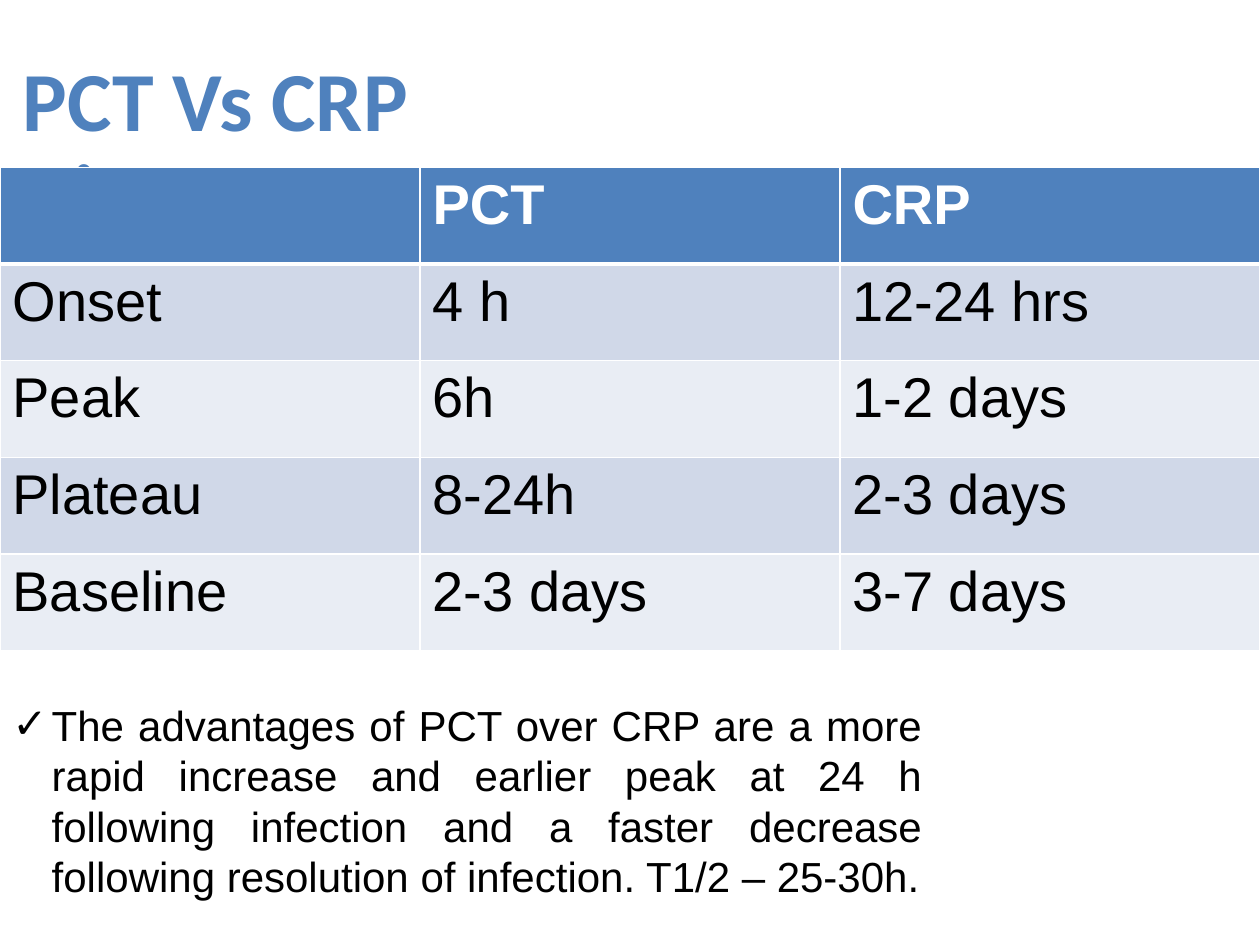
import pptx
import pptx.util
import pptx.dml.color
import pptx.enum.text
from lxml import etree
from pptx.oxml.ns import qn

Pt = pptx.util.Pt
RGB = pptx.dml.color.RGBColor
PP_ALIGN = pptx.enum.text.PP_ALIGN
ANCHOR = pptx.enum.text.MSO_ANCHOR

BLUE = RGB(0x4F, 0x81, 0xBD)
BAND_DARK = RGB(0xD0, 0xD8, 0xE8)
BAND_LIGHT = RGB(0xE9, 0xED, 0xF4)
WHITE = RGB(0xFF, 0xFF, 0xFF)
BLACK = RGB(0, 0, 0)

TITLE = "PCT Vs CRP"
BODY = "."
MARKERS = [
    ("", "PCT", "CRP"),
    ("Onset", "4 h", "12-24 hrs"),
    ("Peak", "6h", "1-2 days"),
    ("Plateau", "8-24h", "2-3 days"),
    ("Baseline", "2-3 days", "3-7 days"),
]
ADVANTAGES = (
    "The advantages of PCT over CRP are a more rapid increase and earlier peak "
    "at 24 h following infection and a faster decrease following resolution of "
    "infection. T1/2 – 25-30h."
)

SLIDE_W, SLIDE_H = 720, 540
TABLE_TOP, TABLE_H = 95.76, 276


def style_font(font, size, name, color, bold=False):
    for attribute, value in dict(size=Pt(size), name=name, bold=bold).items():
        setattr(font, attribute, value)
    font.color.rgb = color


def add_bullet(paragraph, char, indent, color):
    """Give the paragraph a hanging bullet."""
    props = paragraph._p.get_or_add_pPr()
    props.set("marL", str(Pt(indent)))
    props.set("indent", str(-Pt(indent)))
    bullet_color = etree.SubElement(props, qn("a:buClr"))
    etree.SubElement(bullet_color, qn("a:srgbClr"), val=str(color))
    etree.SubElement(props, qn("a:buFont"), typeface="Arial")
    etree.SubElement(props, qn("a:buChar"), char=char)


def add_text(slide, text, box, font, bullet=None, align=None, anchor=ANCHOR.TOP):
    frame = slide.shapes.add_textbox(*map(Pt, box)).text_frame
    frame.word_wrap = True
    frame.vertical_anchor = anchor
    paragraph = frame.paragraphs[0]
    paragraph.alignment = align
    if bullet:
        add_bullet(paragraph, *bullet)
    run = paragraph.add_run()
    run.text = text
    style_font(run.font, *font)


def set_borders(cell, widths):
    """Draw white borders; must run before the cell gets its fill."""
    props = cell._tc.get_or_add_tcPr()
    for side, width in widths.items():
        line = etree.SubElement(props, qn("a:ln" + side), w=str(Pt(width)))
        fill = etree.SubElement(line, qn("a:solidFill"))
        etree.SubElement(fill, qn("a:srgbClr"), val=str(WHITE))


def add_marker_table(slide):
    row_count, column_count = len(MARKERS), len(MARKERS[0])
    table = slide.shapes.add_table(
        row_count, column_count, 0, Pt(TABLE_TOP), Pt(SLIDE_W), Pt(TABLE_H)
    ).table
    for r, values in enumerate(MARKERS):
        header = r == 0
        band = BLUE if header else (BAND_LIGHT, BAND_DARK)[r % 2]
        widths = dict(L=1, R=1, T=3 if r == 1 else 1, B=3 if header else 1)
        for c, value in enumerate(values):
            cell = table.cell(r, c)
            set_borders(cell, widths)
            cell.fill.solid()
            cell.fill.fore_color.rgb = band
            cell.text = value
            style_font(cell.text_frame.paragraphs[0].font, 32, "Arial",
                       WHITE if header else BLACK, header)
            for run in cell.text_frame.paragraphs[0].runs:
                style_font(run.font, 32, "Arial", WHITE if header else BLACK, header)


def main():
    deck = pptx.Presentation()
    deck.slide_width, deck.slide_height = Pt(SLIDE_W), Pt(SLIDE_H)
    slide = deck.slides.add_slide(deck.slide_layouts[6])
    add_text(slide, TITLE, (6, 21.6, 637, 68.4), (48, "Calibri", BLUE, True),
             anchor=ANCHOR.MIDDLE)
    add_text(slide, BODY, (36, 77, 607.5, 405.5), (28, "Calibri", BLACK),
             bullet=("•", 27, BLUE))
    add_marker_table(slide)
    add_text(slide, ADVANTAGES, (0, 396, 534, 145.5), (24, "Arial", BLACK),
             bullet=("✓", 22.5, BLACK), align=PP_ALIGN.JUSTIFY)
    deck.save("out.pptx")


if __name__ == "__main__":
    main()
